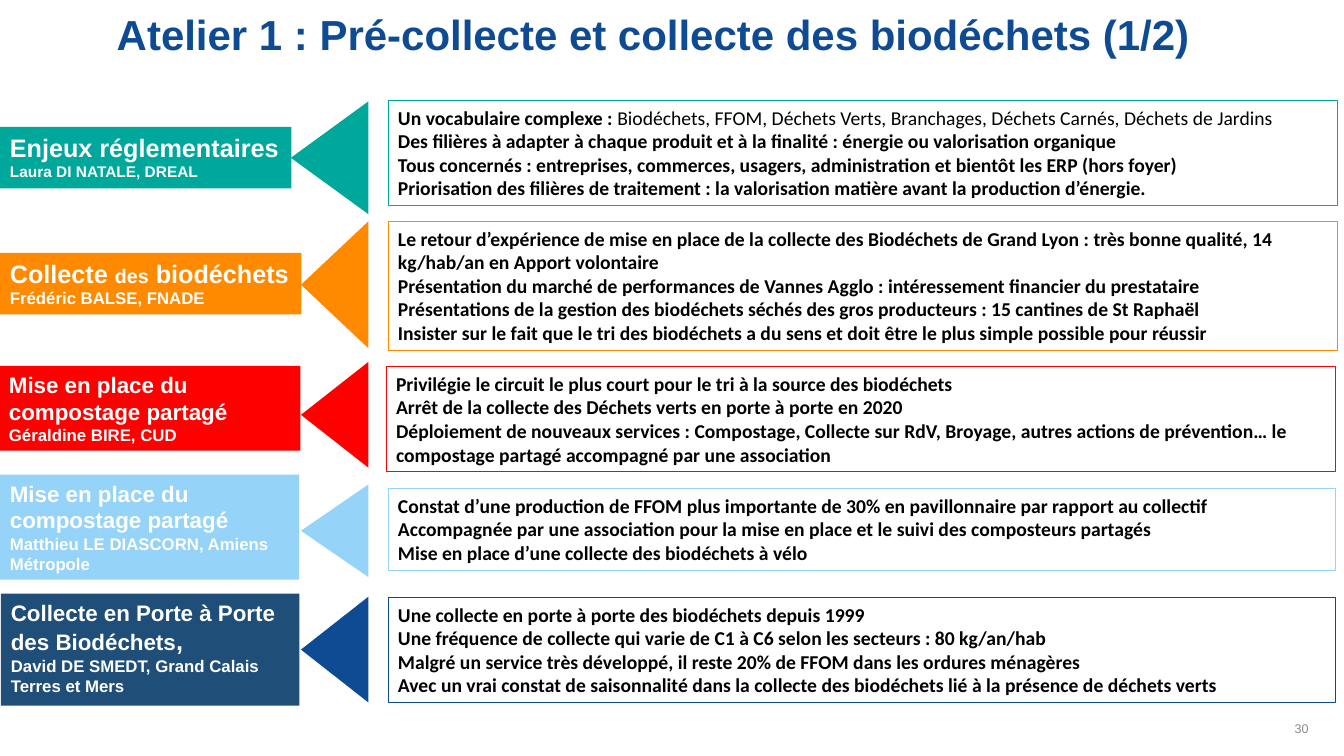
from pptx import Presentation
from pptx.dml.color import RGBColor as Rgb
from pptx.enum.shapes import MSO_SHAPE as Form
from pptx.enum.text import MSO_ANCHOR as Anchor, MSO_AUTO_SIZE as Fit, PP_ALIGN as Align
from pptx.util import Pt

HUES = {"teal": "00A89C", "orange": "FF8A00", "red": "FF0000", "sky": "95D3F9",
        "blue": "0F4B93", "navy": "1F4E79", "white": "FFFFFF", "black": "000000",
        "grey": "8C8C8C"}
TIP_END = 263.2  # right edge shared by all arrowheads


class Deck:
    def __init__(self):
        self.prs = Presentation()
        self.prs.slide_width, self.prs.slide_height = Pt(960), Pt(540)
        self.slide = self.prs.slides.add_slide(self.prs.slide_layouts[6])

    def hue(self, name):
        return Rgb.from_string(HUES[name])

    def shape(self, form, area, fill=None, line=None):
        item = self.slide.shapes.add_shape(form, *map(Pt, area))
        item.shadow.inherit = False
        if fill:
            item.fill.solid()
            item.fill.fore_color.rgb = self.hue(fill)
        else:
            item.fill.background()
        if line:
            item.line.color.rgb = self.hue(line)
            item.line.width = Pt(0.75)
        else:
            item.line.fill.background()
        return item

    def put(self, item, paras, font, color, align=Align.LEFT, anchor=Anchor.TOP):
        """Each paragraph is a list of (text, size, bold) runs."""
        frame = item.text_frame
        frame.word_wrap = True
        frame.vertical_anchor = anchor
        for i, runs in enumerate(paras):
            para = frame.paragraphs[0] if i == 0 else frame.add_paragraph()
            para.alignment = align
            for text, size, bold in runs:
                run = para.add_run()
                run.text = text
                run.font.name, run.font.size, run.font.bold = font, Pt(size), bold
                run.font.color.rgb = self.hue(color)
        return frame

    def text(self, area, runs, color, **style):
        box = self.slide.shapes.add_textbox(*map(Pt, area))
        return self.put(box, [runs], "Arial", color, **style)

    def label(self, area, fill, head, name):
        item = self.shape(Form.RECTANGLE, area, fill=fill)
        paras = [[(text, size, True) for text, size in part] for part in (head, [name])]
        self.put(item, paras, "Arial", "white").auto_size = Fit.SHAPE_TO_FIT_TEXT

    def arrow(self, mid, span, depth, fill):
        left = TIP_END - depth / 2 - span / 2
        item = self.shape(Form.ISOSCELES_TRIANGLE, (left, mid - depth / 2, span, depth), fill=fill)
        item.rotation = 270

    def panel(self, area, line, paras):
        item = self.shape(Form.RECTANGLE, area, line=line)
        # A plain string is one bold paragraph; a pair is a bold lead and a regular tail
        rows = [[(p, 14, True)] if isinstance(p, str)
                else [(p[0], 14, True), (p[1], 14, False)] for p in paras]
        self.put(item, rows, "Calibri", "black").auto_size = Fit.SHAPE_TO_FIT_TEXT


# Each topic: colour, label (fill, area, heading, speaker), arrow (middle, span, depth), panel
TOPICS = [
    ("teal", "teal", (0, 90.7, 208.1, 43.9),
     [("Enjeux réglementaires", 18)], ("Laura DI NATALE, DREAL", 11),
     (112.7, 80.6, 55.4), (277.2, 72, 678.2, 74.9),
     [("Un vocabulaire complexe : ",
       "Biodéchets, FFOM, Déchets Verts, Branchages, Déchets Carnés, Déchets de Jardins"),
      "Des filières à adapter à chaque produit et à la finalité : énergie ou valorisation organique",
      "Tous concernés : entreprises, commerces, usagers, administration et bientôt les ERP (hors foyer)",
      "Priorisation des filières de traitement : la valorisation matière avant la production d’énergie."]),
    ("orange", "orange", (0, 180.7, 215.3, 43.9),
     [("Collecte ", 18), ("des", 14), (" biodéchets", 18)], ("Frédéric BALSE, FNADE", 12),
     (203.4, 90.7, 48.2), (277.2, 158.4, 678.2, 92.2),
     ["Le retour d’expérience de mise en place de la collecte des Biodéchets de Grand Lyon : "
      "très bonne qualité, 14 kg/hab/an en Apport volontaire",
      "Présentation du marché de performances de Vannes Agglo : intéressement financier du prestataire",
      "Présentations de la gestion des biodéchets séchés des gros producteurs : 15 cantines de St Raphaël",
      "Insister sur le fait que le tri des biodéchets a du sens et doit être le plus simple possible "
      "pour réussir"]),
    ("red", "red", (-0.7, 261.4, 215.3, 60.5),
     [("Mise en place du compostage partagé", 16)], ("Géraldine BIRE, CUD", 12),
     (296.3, 75.6, 48.2), (275.8, 262.1, 678.2, 74.9),
     ["Privilégie le circuit le plus court pour le tri à la source des biodéchets",
      "Arrêt de la collecte des Déchets verts en porte à porte en 2020",
      "Déploiement de nouveaux services : Compostage, Collecte sur RdV, Broyage, autres actions de "
      "prévention… le compostage partagé accompagné par une association"]),
    ("sky", "sky", (0, 339.1, 213.8, 74.9),
     [("Mise en place du compostage partagé", 16)], ("Matthieu LE DIASCORN, Amiens Métropole", 12),
     (379.1, 66.2, 48.2), (277.2, 349.2, 676.8, 58.3),
     ["Constat d’une production de FFOM plus importante de 30% en pavillonnaire par rapport au collectif",
      "Accompagnée par une association pour la mise en place et le suivi des composteurs partagés",
      "Mise en place d’une collecte des biodéchets à vélo"]),
    ("blue", "navy", (0.7, 424.1, 213.1, 79.9),
     [("Collecte en Porte à Porte des Biodéchets", 16), (",", 18)],
     ("David DE SMEDT, Grand Calais Terres et Mers", 12),
     (464, 75.6, 48.2), (277.2, 427, 676.8, 74.9),
     ["Une collecte en porte à porte des biodéchets depuis 1999",
      "Une fréquence de collecte qui varie de C1 à C6 selon les secteurs : 80 kg/an/hab",
      "Malgré un service très développé, il reste 20% de FFOM dans les ordures ménagères",
      "Avec un vrai constat de saisonnalité dans la collecte des biodéchets lié à la présence de "
      "déchets verts"]),
]


def main():
    deck = Deck()

    # Title
    title = deck.text((76.3, 6.5, 828, 44.6),
                      [("Atelier 1 : Pré-collecte et collecte des biodéchets (1/2)", 30, True)], "blue")
    title.paragraphs[0].line_spacing = 0.9

    # Topic rows
    for color, fill, area, head, name, tip, frame, paras in TOPICS:
        deck.label(area, fill, head, name)
        deck.arrow(*tip, color)
        deck.panel(frame, color, paras)

    # Page number
    deck.text((725.8, 511.2, 216, 18), [("30", 9, False)], "grey",
              align=Align.RIGHT, anchor=Anchor.BOTTOM)

    deck.prs.save("out.pptx")


if __name__ == "__main__":
    main()
